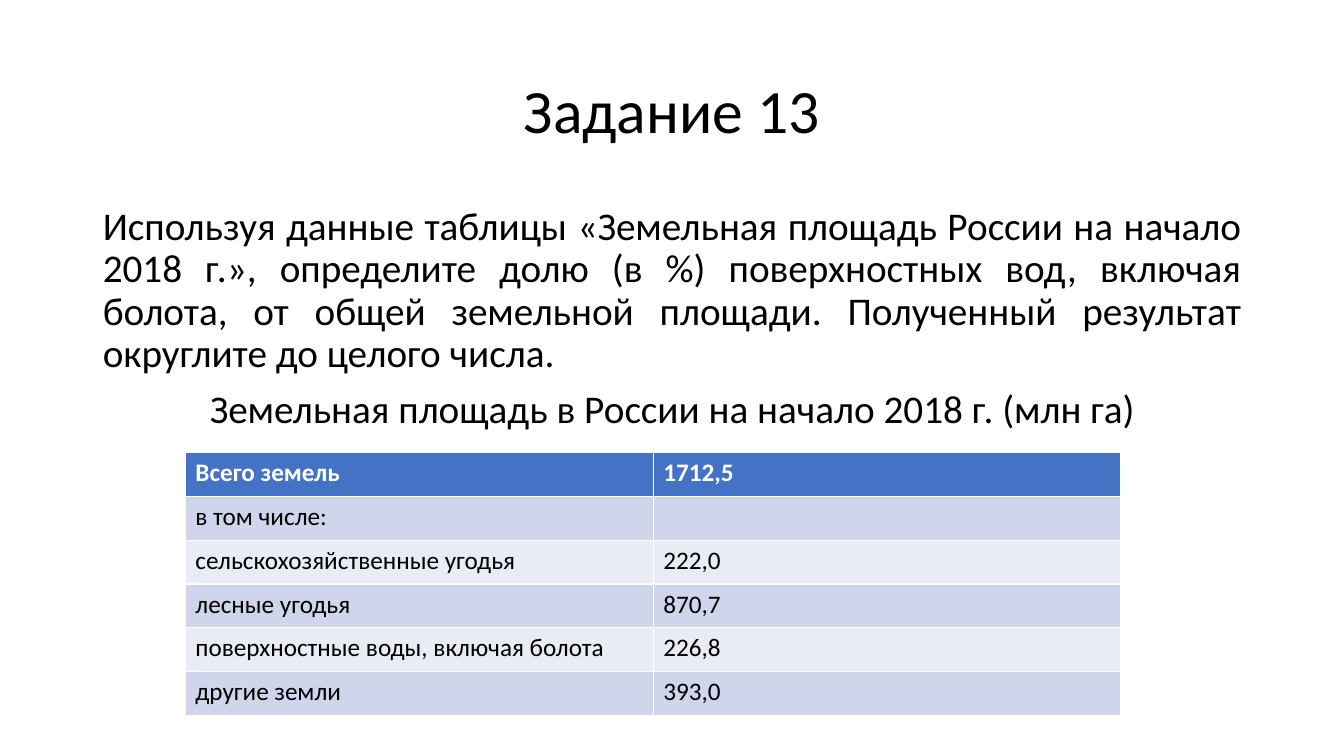
from lxml import etree
from pptx import Presentation
from pptx.dml.color import RGBColor
from pptx.enum.text import MSO_ANCHOR, MSO_AUTO_SIZE, PP_ALIGN
from pptx.oxml.ns import qn
from pptx.util import Inches, Pt

CENTER, JUSTIFY, LEFT = PP_ALIGN.CENTER, PP_ALIGN.JUSTIFY, PP_ALIGN.LEFT
TOP, MIDDLE = MSO_ANCHOR.TOP, MSO_ANCHOR.MIDDLE
NO_FIT = MSO_AUTO_SIZE.NONE

BLACK = RGBColor(0x00, 0x00, 0x00)
WHITE = RGBColor(0xFF, 0xFF, 0xFF)
HEADER_BLUE = RGBColor(0x44, 0x72, 0xC4)
BAND_DARK = RGBColor(0xCF, 0xD5, 0xEA)
BAND_LIGHT = RGBColor(0xE9, 0xEB, 0xF5)

GRID_COLUMNS, GRID_ROWS = 29, 75

HEADING = "Задание 13"
TASK = (
    "Используя данные таблицы «Земельная площадь России на начало 2018 г.», "
    "определите долю (в %) поверхностных вод, включая болота, от общей "
    "земельной площади. Полученный результат округлите до целого числа."
)
TABLE_CAPTION = "Земельная площадь в России на начало 2018 г. (млн га)"
LAND_AREAS = [
    ("Всего земель", "1712,5"),
    ("в том числе:", ""),
    ("сельскохозяйственные угодья", "222,0"),
    ("лесные угодья", "870,7"),
    ("поверхностные воды, включая болота", "226,8"),
    ("другие земли", "393,0"),
]


def apply_format(target, values):
    for name, value in values.items():
        setattr(target, name, value)


class TaskSlide:
    font_name = "Calibri"
    heading_size, body_size, table_size = Pt(44), Pt(28), Pt(18)

    def __init__(self, deck):
        self.deck = deck
        self.slide = deck.slides.add_slide(deck.slide_layouts[1])

    def area(self, column, row, columns, rows):
        across = self.deck.slide_width / GRID_COLUMNS
        down = self.deck.slide_height / GRID_ROWS
        return {
            "left": round(column * across),
            "top": round(row * down),
            "width": round(columns * across),
            "height": round(rows * down),
        }

    def fill_paragraph(self, paragraph, text, size, color=BLACK, bold=False, **layout):
        apply_format(paragraph, layout)
        if text:
            run = paragraph.add_run()
            run.text = text
            apply_format(run.font, {"name": self.font_name, "size": size, "bold": bold})
            run.font.color.rgb = color

    def frame(self, placeholder, area, anchor):
        apply_format(placeholder, area)
        apply_format(
            placeholder.text_frame,
            {"word_wrap": True, "auto_size": NO_FIT, "vertical_anchor": anchor},
        )
        return placeholder.text_frame

    def title(self, text, area):
        heading = self.frame(self.slide.shapes.title, area, MIDDLE)
        self.fill_paragraph(heading.paragraphs[0], text, self.heading_size,
                            alignment=CENTER, line_spacing=0.9)

    def body(self, entries, area):
        content = self.frame(self.slide.placeholders[1], area, TOP)
        for index, (text, alignment) in enumerate(entries):
            paragraph = content.add_paragraph() if index else content.paragraphs[0]
            self.fill_paragraph(paragraph, text, self.body_size, alignment=alignment,
                                line_spacing=0.9, space_before=Pt(10))
            properties = paragraph._p.get_or_add_pPr()
            for name in ("marL", "indent"):
                properties.set(name, "0")
            etree.SubElement(properties, qn("a:buNone"))

    def table(self, records, area):
        grid = self.slide.shapes.add_table(len(records), len(records[0]), **area).table
        for row, record in enumerate(records):
            header = row == 0
            band = BAND_DARK if row % 2 else BAND_LIGHT
            for column, text in enumerate(record):
                cell = grid.cell(row, column)
                cell.fill.solid()
                cell.fill.fore_color.rgb = HEADER_BLUE if header else band
                self.fill_paragraph(cell.text_frame.paragraphs[0], text, self.table_size,
                                    WHITE if header else BLACK, header, alignment=LEFT)


def main():
    deck = Presentation()
    apply_format(deck, {"slide_width": Inches(13.33), "slide_height": Inches(7.5)})
    task = TaskSlide(deck)
    task.title(HEADING, task.area(2, 4, 25, 14.5))
    task.body([(TASK, JUSTIFY), (TABLE_CAPTION, CENTER)], task.area(2, 20, 25, 47.6))
    task.table(LAND_AREAS, task.area(4, 44.9, 20.19, 26.1))
    deck.save("out.pptx")


if __name__ == "__main__":
    main()
